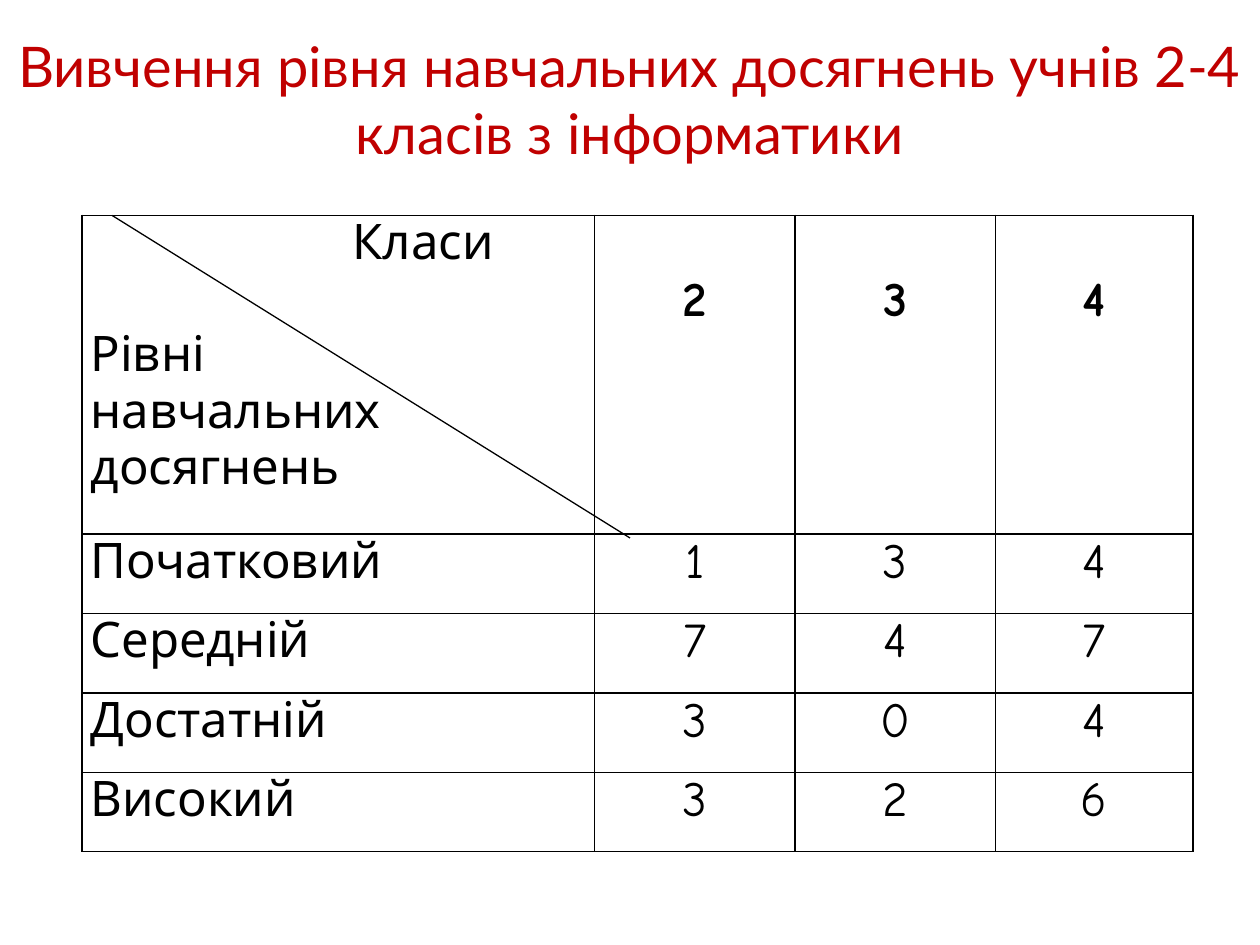
from lxml import etree
from pptx import Presentation
from pptx.dml.color import RGBColor
from pptx.enum.shapes import MSO_CONNECTOR
from pptx.enum.text import PP_ALIGN
from pptx.oxml import parse_xml
from pptx.util import Inches, Pt

LINE = MSO_CONNECTOR.STRAIGHT
MID, JUST = PP_ALIGN.CENTER, PP_ALIGN.JUSTIFY
NS = "http://schemas.openxmlformats.org/drawingml/2006/main"
BLACK, RED = "000000", "C00000"


def style(par, face, size, tint, align, bold=False):
    par.alignment = align
    for run in par.runs:
        font = run.font
        font.name, font.size, font.bold = face, Pt(size), bold
        font.color.rgb = RGBColor.from_string(tint)


def frame(cell):
    props = cell._tc.get_or_add_tcPr()
    for side in "LRTB":
        props.append(parse_xml(
            f'<a:ln{side} xmlns:a="{NS}" w="12700"><a:solidFill>'
            f'<a:srgbClr val="{BLACK}"/></a:solidFill></a:ln{side}>'))
    cell.fill.background()


deck = Presentation()
deck.slide_width, deck.slide_height = Inches(10), Inches(7.5)
slide = deck.slides.add_slide(deck.slide_layouts[6])

# Title
box = slide.shapes.add_textbox(0, Inches(0.2), deck.slide_width, Inches(1.18))
text = box.text_frame
text.word_wrap = True
text.text = "Вивчення рівня навчальних досягнень учнів 2-4 класів з інформатики"
style(text.paragraphs[0], "Lato", 32, RED, MID)

# Table of levels by class
rows = [
    ["Класи\nРівні\nнавчальних досягнень", "2", "3", "4"],
    ["Початковий", "1", "3", "4"],
    ["Середній", "7", "4", "7"],
    ["Достатній", "3", "0", "4"],
    ["Високий", "3", "2", "6"],
]
wide = [4.07, 1.59, 1.59, 1.57]
high = [2.53] + [0.63] * 4
left, top = 0.65, 1.71
table = slide.shapes.add_table(
    len(rows), len(wide), Inches(left), Inches(top),
    Inches(sum(wide)), Inches(sum(high))).table
table.first_row = table.horz_banding = False
for col, size in zip(table.columns, wide):
    col.width = Inches(size)
for row, size in zip(table.rows, high):
    row.height = Inches(size)

for r, row in enumerate(rows):
    for c, value in enumerate(row):
        cell = table.cell(r, c)
        frame(cell)
        cell.margin_left = cell.margin_right = Inches(0.07)
        # Class numbers sit one text line down
        cell.margin_top = Inches(0.45) if r == 0 and c else 0
        cell.margin_bottom = 0
        cell.text_frame.text = value
        for par in cell.text_frame.paragraphs:
            style(par, "Comic Neue", 28, BLACK, MID if c else JUST,
                  r == 0 and c > 0)

# Corner cell: indented class label, gap above the level label
label, level = table.cell(0, 0).text_frame.paragraphs[:2]
label._p.get_or_add_pPr().set("marL", str(Inches(2.08)))
level.space_before = Pt(32)

# Diagonal of the corner cell
slash = slide.shapes.add_connector(
    LINE, Inches(0.89), Inches(top), Inches(5), Inches(4.27))
slash.line.color.rgb = RGBColor.from_string(BLACK)
slash.line.width = Pt(0.75)
etree.SubElement(slash._element.spPr, f"{{{NS}}}effectLst")

deck.save("out.pptx")
